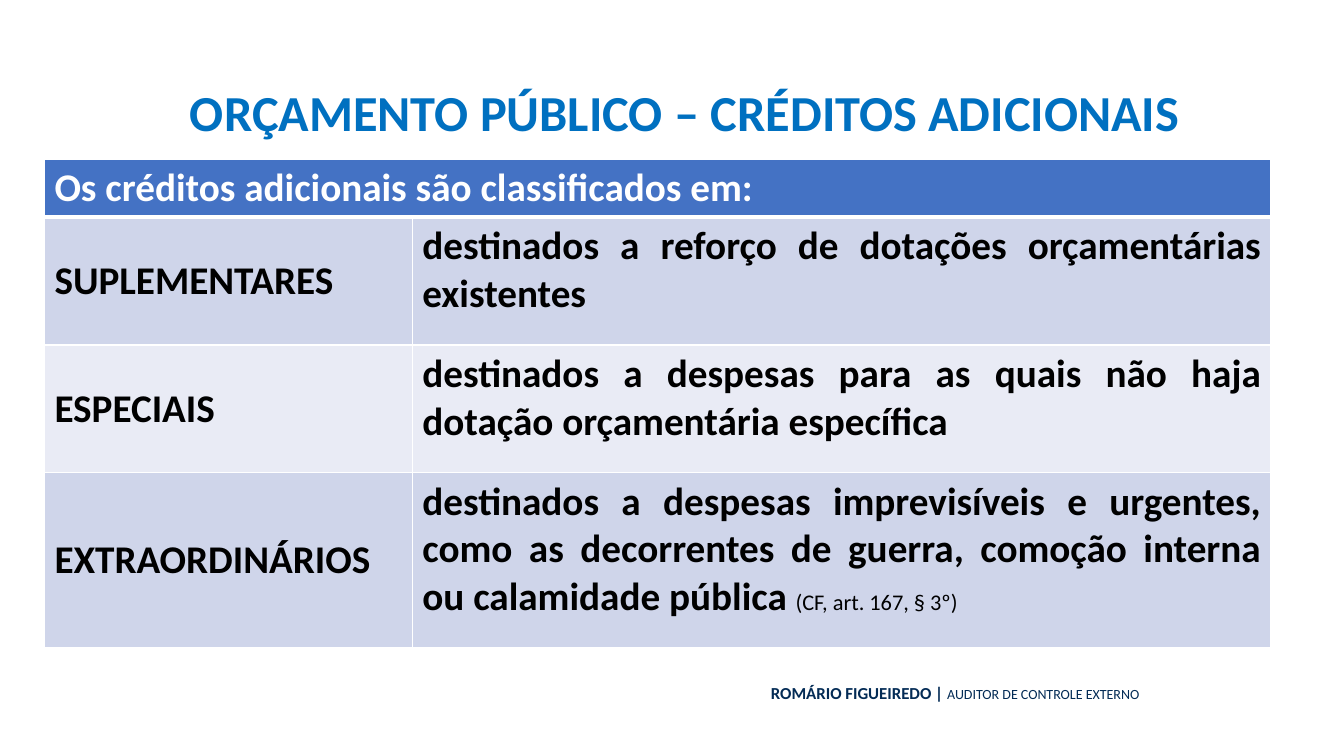
from lxml.etree import SubElement as Sub
from pptx import Presentation
from pptx.dml.color import RGBColor as RGB
from pptx.enum.text import MSO_ANCHOR as Anchor, MSO_AUTO_SIZE as Auto, PP_ALIGN as Align
from pptx.oxml.ns import qn
from pptx.util import Cm, Pt

# Content
TITLE = "ORÇAMENTO PÚBLICO – CRÉDITOS ADICIONAIS"
HEAD = "Os créditos adicionais são classificados em:"
ROWS = [
    ("SUPLEMENTARES", "destinados a reforço de dotações orçamentárias existentes", ""),
    ("ESPECIAIS", "destinados a despesas para as quais não haja dotação "
     "orçamentária específica", ""),
    ("EXTRAORDINÁRIOS", "destinados a despesas imprevisíveis e urgentes, como as "
     "decorrentes de guerra, comoção interna ou calamidade pública ",
     "(CF, art. 167, § 3º)"),
]
AUTHOR, ROLE = "ROMÁRIO FIGUEIREDO | ", "AUDITOR DE CONTROLE EXTERNO"

# Style
FONT = "Calibri"
BLUE, NAVY = RGB(0x00, 0x70, 0xC0), RGB(0x03, 0x2B, 0x55)
WHITE, BLACK = RGB(0xFF, 0xFF, 0xFF), RGB(0, 0, 0)
TOP = RGB(0x44, 0x72, 0xC4)
BANDS = RGB(0xCF, 0xD5, 0xEA), RGB(0xE9, 0xEB, 0xF5)
WIDTHS = 9.27, 21.64
HEIGHTS = 1.43, 3.22, 3.22, 4.41


def write(par, parts, align):
    """Fill a paragraph with (text, size, bold, colour) parts."""
    par.alignment = align
    for text, size, bold, color in parts:
        run = par.add_run()
        run.text = text
        font = run.font
        font.name, font.size, font.bold = FONT, Pt(size), bold
        font.color.rgb = color


def edge(cell, bottom):
    """Draw white cell borders, the bottom one with its own width."""
    props = cell._tc.get_or_add_tcPr()
    for i, side in enumerate("LRTB"):
        width = bottom if side == "B" else 1
        line = Sub(props, qn("a:ln" + side), w=str(Pt(width)))
        fill = Sub(line, qn("a:solidFill"))
        Sub(fill, qn("a:srgbClr"), val=str(WHITE))
        props.insert(i, line)


deck = Presentation()
deck.slide_width, deck.slide_height = Cm(33.87), Cm(19.05)
slide = deck.slides.add_slide(deck.slide_layouts[5])

# Title
title = slide.shapes.title
title.left, title.top, title.width, title.height = Cm(2.16), Cm(0.38), Cm(30.2), Cm(2.9)
frame = title.text_frame
frame.auto_size, frame.word_wrap = Auto.NONE, True
frame.vertical_anchor = Anchor.TOP
frame.paragraphs[0].line_spacing = 2.0
write(frame.paragraphs[0], [(TITLE, 36, True, BLUE)], Align.CENTER)

# Table
table = slide.shapes.add_table(len(HEIGHTS), len(WIDTHS), Cm(1.12), Cm(4.01),
                               Cm(sum(WIDTHS)), Cm(sum(HEIGHTS))).table
for col, width in zip(table.columns, WIDTHS):
    col.width = Cm(width)
for row, height in zip(table.rows, HEIGHTS):
    row.height = Cm(height)
table.cell(0, 0).merge(table.cell(0, 1))
write(table.cell(0, 0).text_frame.paragraphs[0], [(HEAD, 28, True, WHITE)], Align.LEFT)

for r, (name, text, note) in enumerate(ROWS, 1):
    left, right = table.cell(r, 0), table.cell(r, 1)
    left.vertical_anchor = Anchor.MIDDLE
    write(left.text_frame.paragraphs[0], [(name, 28, True, BLACK)], Align.LEFT)
    parts = [(text, 28, True, BLACK)]
    if note:
        parts.append((note, 16, False, BLACK))
    write(right.text_frame.paragraphs[0], parts, Align.JUSTIFY)

for r, row in enumerate(table.rows):
    for cell in row.cells:
        cell.fill.solid()
        cell.fill.fore_color.rgb = BANDS[(r - 1) % 2] if r else TOP
        edge(cell, 1 if r else 3)

# Footer
foot = slide.shapes.add_textbox(Cm(3.99), Cm(17.09), Cm(24.97), Cm(0.76)).text_frame
foot.word_wrap = True
write(foot.paragraphs[0], [(AUTHOR, 12, True, NAVY), (ROLE, 10, False, NAVY)], Align.RIGHT)

deck.save("out.pptx")
